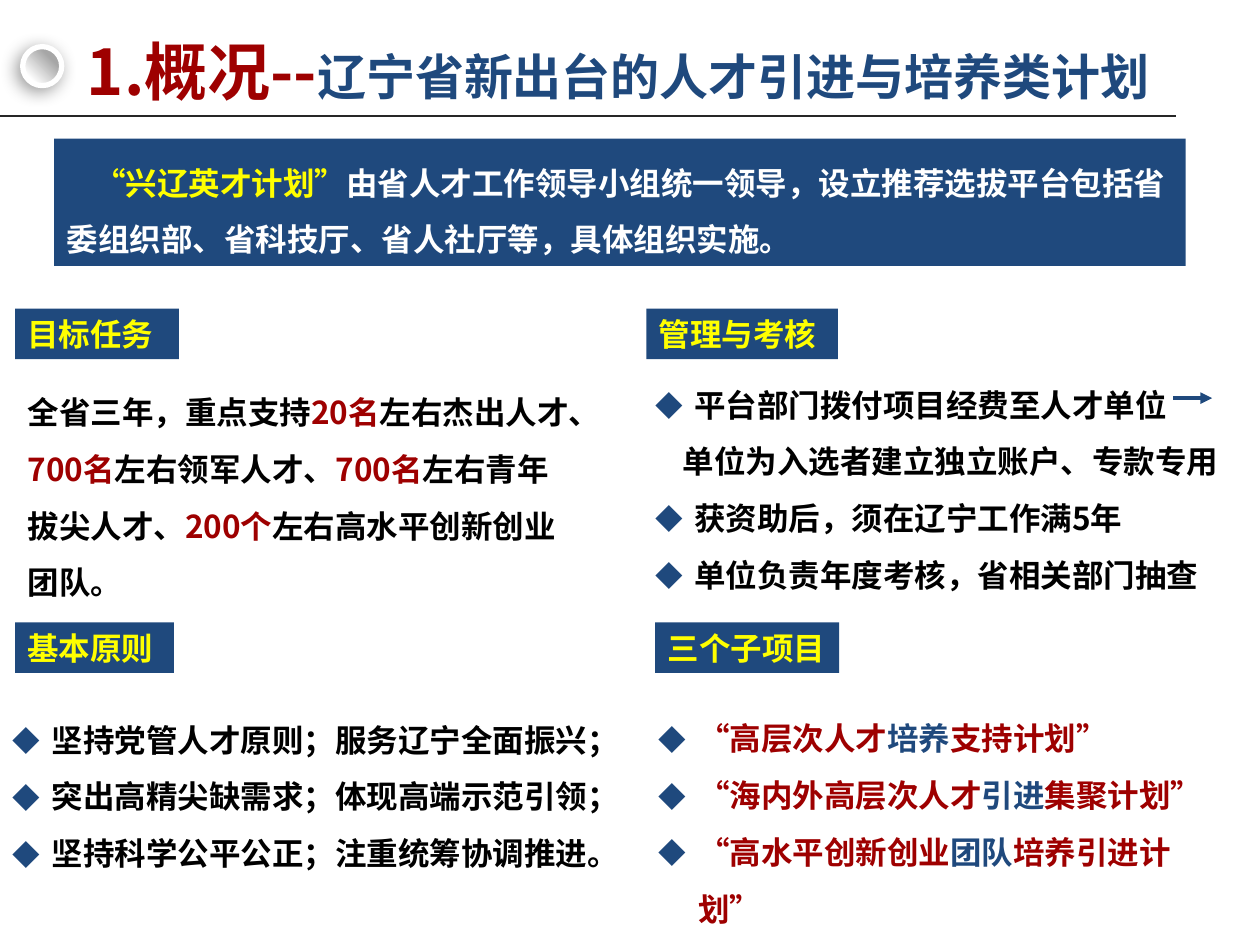
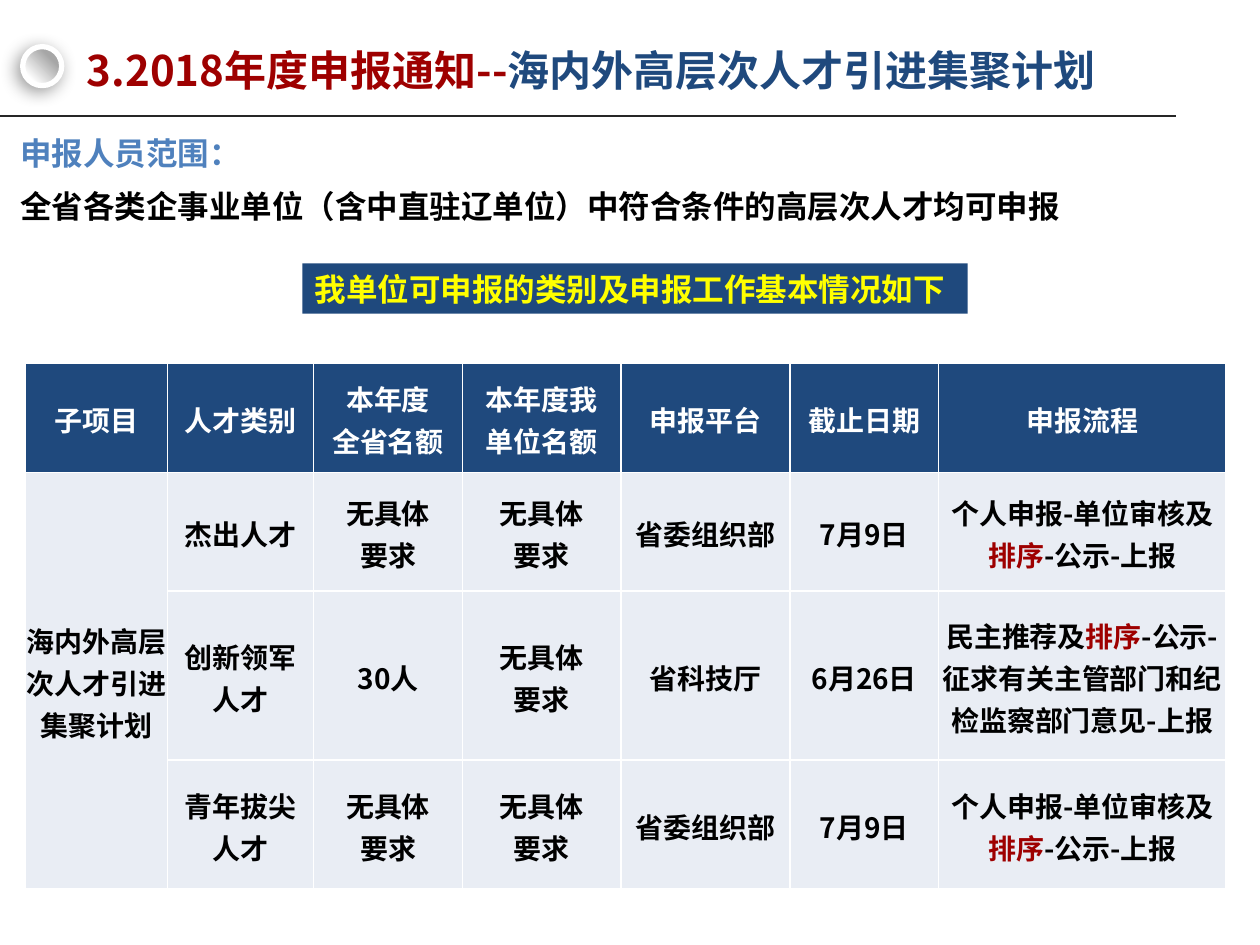
from dataclasses import dataclass, replace
from typing import Optional, Union

from lxml.etree import SubElement
from pptx import Presentation
from pptx.dml.color import RGBColor
from pptx.enum.shapes import MSO_CONNECTOR as Link, MSO_SHAPE as Form
from pptx.enum.text import MSO_ANCHOR as Anchor, MSO_AUTO_SIZE as Fit, PP_ALIGN as Align
from pptx.oxml.ns import qn
from pptx.util import Inches, Pt

FONT = "Noto Sans CJK SC"
HUES = {
    "navy": "1F497D", "red": "9E0000", "yellow": "FFFF00", "white": "FFFFFF",
    "black": "000000", "blue": "4F81BD", "pale": "E9EDF4", "gray": "A6A6A6",
    "rule": "262626",
}


@dataclass(frozen=True)
class Style:
    size: int
    main: str
    accent: str = "red"
    big: Optional[int] = None
    space: Union[float, Pt, None] = None
    align: Align = Align.LEFT


@dataclass(frozen=True)
class Box:
    left: float
    top: float
    width: float
    height: float = 0.4

    def place(self) -> tuple:
        return tuple(Inches(v) for v in (self.left, self.top, self.width, self.height))


@dataclass(frozen=True)
class Tag:
    text: str
    box: Box


@dataclass(frozen=True)
class Block:
    slot: int
    box: Box
    style: Style
    lines: tuple
    marks: bool = True


HEAD = Style(24, "red", "navy")
LABEL = Style(18, "yellow")
BODY = Style(18, "black", space=1.5)
PLANS = replace(BODY, main="red", accent="navy")
BAND = replace(BODY, main="white", accent="yellow")
CELL = Style(16, "black", space=Pt(24), align=Align.CENTER)

TAGS = (
    Tag("目标任务", Box(0.12, 2.45, 1.3)),
    Tag("管理与考核", Box(5.13, 2.45, 1.52)),
    Tag("基本原则", Box(0.12, 4.94, 1.26)),
    Tag("三个子项目", Box(5.2, 4.94, 1.46)),
)
BLOCKS = (
    Block(1, Box(0.12, 2.92, 4.56, 1.92), BODY, (
        "全省三年，重点支持|20名|左右杰出人才、|700名|左右领军人才、|700名|"
        "左右青年拔尖人才、|200个|左右高水平创新创业团队。",), False),
    Block(2, Box(0, 5.52, 5.04, 1.46), BODY, (
        "坚持党管人才原则；服务辽宁全面振兴；",
        "突出高精尖缺需求；体现高端示范引领；",
        "坚持科学公平公正；注重统筹协调推进。")),
    Block(3, Box(5.1, 2.86, 4.79, 1.92), BODY, (
        "平台部门拨付项目经费至人才单位",
        "单位为入选者建立独立账户、专款专用",
        "获资助后，须在辽宁工作满5年",
        "单位负责年度考核，省相关部门抽查")),
    Block(4, Box(5.13, 5.51, 4.72, 1.46), PLANS, (
        "“高层次人才|培养|支持计划”",
        "“海内外高层次人才|引进|集聚计划”",
        "“高水平创新创业|团队|培养引进计划”")),
)
COLS = (1.13, 1.16, 1.18, 1.26, 1.34, 1.18, 2.28)
ROWS = (0.87, 0.94, 1.1, 1.02)
FREE = "无具体\n要求"
FLOW = "个人申报-单位审核及|排序|-公示-上报"
GRID = (
    ("子项目", "人才类别", "本年度\n全省名额", "本年度我\n单位名额",
     "申报平台", "截止日期", "申报流程"),
    ("海内外高层次人才引进集聚计划", "杰出人才", FREE, FREE, "省委组织部", "7月9日", FLOW),
    ("", "创新领军\n人才", "30人", FREE, "省科技厅", "6月26日",
     "民主推荐及|排序|-公示-征求有关主管部门和纪检监察部门意见-上报"),
    ("", "青年拔尖\n人才", FREE, FREE, "省委组织部", "7月9日", FLOW),
)


def rgb(name: str) -> RGBColor:
    return RGBColor.from_string(HUES[name])


def node(parent, tag: str, **attrs):
    return SubElement(parent, qn(tag), {k: str(v) for k, v in attrs.items()})


def hue(parent, name: str):
    return node(parent, "a:srgbClr", val=HUES[name])


def write(para, text: str, style: Style) -> None:
    para.alignment = style.align
    para.space_before = Pt(0)
    if style.space:
        para.line_spacing = style.space
    for i, part in enumerate(text.split("|")):
        for j, line in enumerate(part.split("\n")):
            if j:
                para.add_line_break()
            if not line:
                continue
            run = para.add_run()
            run.text = line
            font = run.font
            font.bold = True
            font.size = Pt(style.big if i % 2 and style.big else style.size)
            font.color.rgb = rgb(style.accent if i % 2 else style.main)
            font.name = FONT
            node(font._element, "a:ea", typeface=FONT)


def inset(para, left: float, first: float) -> None:
    props = para._p.get_or_add_pPr()
    props.set("marL", str(Inches(left)))
    props.set("indent", str(Inches(first)))


def mark(para) -> None:
    inset(para, 0.31, -0.31)
    props = para._p.get_or_add_pPr()
    hue(node(props, "a:buClr"), "navy")
    node(props, "a:buSzPct", val=88000)
    node(props, "a:buFont", typeface=FONT)
    node(props, "a:buChar", char="◆")


def plain(para, first: float = 0) -> None:
    inset(para, 0, first)
    node(para._p.get_or_add_pPr(), "a:buNone")


def setup(shape, anchor: Anchor = Anchor.TOP):
    frame = shape.text_frame
    frame.word_wrap = True
    frame.auto_size = Fit.NONE
    frame.vertical_anchor = anchor
    return frame


def move(shape, box: Box) -> None:
    shape.left, shape.top, shape.width, shape.height = box.place()


def fill(slide, block: Block) -> list:
    shape = slide.placeholders[block.slot]
    move(shape, block.box)
    frame = setup(shape)
    paras = []
    for i, line in enumerate(block.lines):
        para = frame.add_paragraph() if i else frame.paragraphs[0]
        write(para, line, block.style)
        paras.append(para)
    return paras


def panel(slide, box: Box, text: str, style: Style):
    shape = slide.shapes.add_shape(Form.RECTANGLE, *box.place())
    shape.shadow.inherit = False
    shape.fill.solid()
    shape.fill.fore_color.rgb = rgb("navy")
    shape.line.fill.background()
    para = setup(shape).paragraphs[0]
    write(para, text, style)
    return para


def rule(slide, left: float, right: float, top: float, color: str, width: float):
    line = slide.shapes.add_connector(
        Link.STRAIGHT, Inches(left), Inches(top), Inches(right), Inches(top))
    line.line.color.rgb = rgb(color)
    line.line.width = Pt(width)
    node(line._element.spPr, "a:effectLst")
    return line


def ring(slide) -> None:
    shape = slide.shapes.add_shape(Form.OVAL, *Box(0.18, 0.37, 0.31, 0.31).place())
    shape.fill.gradient()
    stops = shape.fill.gradient_stops
    for stop, spot, color in zip(stops, (0.19, 0.72), ("white", "gray")):
        stop.position = spot
        stop.color.rgb = rgb(color)
    props = shape._element.spPr
    grad = props.find(qn("a:gradFill"))
    for old in grad.findall(qn("a:lin")):
        grad.remove(old)
    way = node(grad, "a:path", path="circle")
    node(way, "a:fillToRect", t=100000, r=100000)
    shape.line.color.rgb = rgb("white")
    shape.line.width = Pt(3)
    shape.shadow.inherit = False
    glow = node(props.find(qn("a:effectLst")), "a:outerShdw", blurRad=Pt(10),
                dist=Pt(3), dir=135 * 60000, algn="tr", rotWithShape=0)
    node(hue(glow, "black"), "a:alpha", val=40000)


def start(deck, layout: int, text: str, style: Style, width: float):
    slide = deck.slides.add_slide(deck.slide_layouts[layout])
    rule(slide, 0, 9.33, 0.92, "rule", 0.75)
    ring(slide)
    title = slide.shapes.title
    move(title, Box(0.59, 0.21, width, 0.69))
    write(setup(title, Anchor.MIDDLE).paragraphs[0], text, style)
    return slide


def edge(cell) -> None:
    props = cell._tc.get_or_add_tcPr()
    for side in "LRTB":
        line = node(props, f"a:ln{side}", w=Pt(1))
        hue(node(line, "a:solidFill"), "white")


def chart(slide) -> None:
    box = Box(0.2, 2.88, sum(COLS), sum(ROWS))
    table = slide.shapes.add_table(len(ROWS), len(COLS), *box.place()).table
    for col, width in zip(table.columns, COLS):
        col.width = Inches(width)
    for row, height in zip(table.rows, ROWS):
        row.height = Inches(height)
    table.cell(1, 0).merge(table.cell(3, 0))
    for r, texts in enumerate(GRID):
        for c, text in enumerate(texts):
            cell = table.cell(r, c)
            cell.margin_left = cell.margin_right = cell.margin_top = Inches(0.01)
            cell.margin_bottom = 0
            cell.vertical_anchor = Anchor.MIDDLE
            edge(cell)
            cell.fill.solid()
            cell.fill.fore_color.rgb = rgb("pale" if r else "navy")
            if text:
                style = CELL if r else replace(CELL, main="white")
                write(cell.text_frame.paragraphs[0], text, style)


def survey(deck) -> None:
    slide = start(deck, 4, "1.概况--|辽宁省新出台的人才引进与培养类计划",
                  replace(HEAD, size=36, big=28), 9.21)
    for block in BLOCKS:
        for i, para in enumerate(fill(slide, block)):
            if not block.marks:
                plain(para)
            elif block.slot == 3 and i == 1:
                plain(para, 0.22)
            else:
                mark(para)
    for tag in TAGS:
        panel(slide, tag.box, tag.text, LABEL)
    para = panel(slide, Box(0.43, 1.1, 8.98, 1.01),
                 "|“兴辽英才计划”|由省人才工作领导小组统一领导，设立推荐选拔平台包括"
                 "省委组织部、省科技厅、省人社厅等，具体组织实施。", BAND)
    inset(para, 0, 0.22)
    arrow = rule(slide, 9.31, 9.62, 3.16, "navy", 2.25)
    node(arrow.line._get_or_add_ln(), "a:tailEnd", type="triangle")


def notice(deck) -> None:
    slide = start(deck, 1, "3.2018年度申报通知--|海内外高层次人才引进集聚计划", HEAD, 9.84)
    scope = Block(1, Box(0.06, 0.9, 9.29, 0.94),
                  Style(18, "black", "blue", space=Pt(30)),
                  ("|申报人员范围：",
                   "全省各类企事业单位（含中直驻辽单位）中符合条件的高层次人才均可申报"), False)
    for para in fill(slide, scope):
        plain(para)
    panel(slide, Box(2.4, 2.09, 5.28), "我单位可申报的类别及申报工作基本情况如下", LABEL)
    chart(slide)


def main() -> None:
    deck = Presentation()
    deck.slide_width, deck.slide_height = Inches(10), Inches(7.5)
    survey(deck)
    notice(deck)
    deck.save("out.pptx")


if __name__ == "__main__":
    main()
